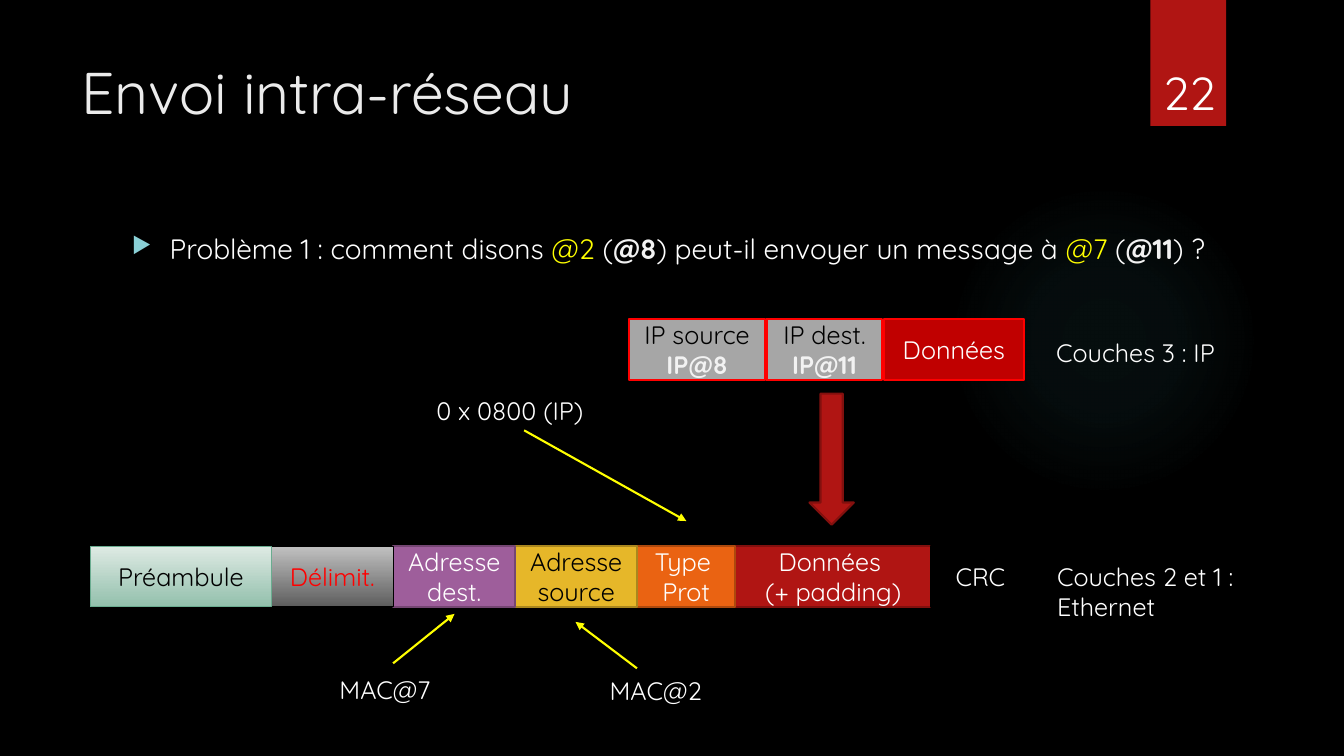
from dataclasses import dataclass

from lxml.etree import SubElement
from pptx import Presentation
from pptx.dml.color import RGBColor
from pptx.enum.shapes import MSO_CONNECTOR, MSO_SHAPE as SHAPE
from pptx.enum.text import MSO_ANCHOR as ANCHOR, PP_ALIGN as ALIGN
from pptx.oxml import parse_xml
from pptx.oxml.ns import nsdecls, qn
from pptx.util import Pt

BLACK = RGBColor(0x00, 0x00, 0x00)
WHITE = RGBColor(0xFF, 0xFF, 0xFF)
TITLE_GREY = RGBColor(0xEB, 0xEB, 0xEB)
PALE = RGBColor(0xF2, 0xF2, 0xF2)
YELLOW = RGBColor(0xFF, 0xFF, 0x00)
RED = RGBColor(0xFF, 0x00, 0x00)
DARK_RED = RGBColor(0xC0, 0x00, 0x00)
ACCENT = RGBColor(0xB0, 0x15, 0x13)
ACCENT_EDGE = RGBColor(0x82, 0x10, 0x0E)
ORANGE = RGBColor(0xEA, 0x63, 0x12)
ORANGE_EDGE = RGBColor(0xAD, 0x49, 0x0D)
GOLD = RGBColor(0xE6, 0xB7, 0x29)
GOLD_EDGE = RGBColor(0xAA, 0x87, 0x1E)
PURPLE = RGBColor(0x9E, 0x5E, 0x9B)
PURPLE_EDGE = RGBColor(0x75, 0x46, 0x73)
GREY = RGBColor(0xA6, 0xA6, 0xA6)
SILVER = RGBColor(0xC1, 0xC1, 0xC1)
IRON = RGBColor(0x5E, 0x5E, 0x5E)
MINT = RGBColor(0xDE, 0xEA, 0xE4)
GREEN = RGBColor(0x93, 0xC0, 0xAC)
GREEN_EDGE = RGBColor(0x6A, 0xAC, 0x90)
TEAL = RGBColor(0x50, 0xB9, 0xC1)
BULLET = RGBColor(0x8A, 0xD0, 0xD6)

FONT = "Quicksand"
ROW_HEIGHT = 43.2
LINEAR = '<a:lin ang="5400000" scaled="0"/>'
RADIAL = ('<a:path path="circle">'
          '<a:fillToRect l="50000" t="50000" r="50000" b="50000"/></a:path>')


@dataclass(frozen=True)
class Run:
    text: str
    color: RGBColor = WHITE
    bold: bool = False


@dataclass(frozen=True)
class Stop:
    position: int
    color: RGBColor
    alpha: int = 100


@dataclass(frozen=True)
class Field:
    """One field of a packet; each run is a paragraph."""
    width: float
    lines: tuple[Run, ...]
    fill: RGBColor | tuple[Stop, ...]
    edge: RGBColor
    edge_width: float = 1.5


@dataclass(frozen=True)
class Label:
    left: float
    top: float
    width: float
    height: float
    run: Run
    size: int = 18


@dataclass(frozen=True)
class Pointer:
    start: tuple[float, float]
    end: tuple[float, float]


ETHERNET = (
    Field(129.2, (Run("Préambule", BLACK),), (Stop(0, MINT), Stop(100, GREEN)), GREEN_EDGE, 0.75),
    Field(87.1, (Run("Délimit.", RED),), (Stop(0, SILVER), Stop(100, IRON)), BLACK, 0.75),
    Field(87.1, (Run("Adresse dest."),), PURPLE, PURPLE_EDGE),
    Field(87.1, (Run("Adresse source", BLACK),), GOLD, GOLD_EDGE),
    Field(70, (Run("Type "), Run("Prot")), ORANGE, ORANGE_EDGE),
    Field(140.2, (Run("Données "), Run("(+ padding)")), ACCENT, ACCENT_EDGE),
)
CRC = Field(70, (Run("CRC"),), BLACK, BLACK)
IP = (
    Field(97.2, (Run("IP source", BLACK), Run("IP@8", PALE, True)), GREY, RED),
    Field(82.8, (Run("IP dest.", BLACK), Run("IP@11", PALE, True)), GREY, RED),
    Field(100.1, (Run("Données"),), DARK_RED, RED),
)
QUESTION = (
    Run("Problème 1 : comment disons "), Run("@2", YELLOW), Run(" ("), Run("@8", PALE, True),
    Run(") peut-il envoyer un message à "), Run("@7 ", YELLOW), Run("("),
    Run("@11", PALE, True), Run(") ?"),
)
LABELS = (
    Label(51.1, 36, 741, 110, Run("Envoi intra-réseau", TITLE_GREY), 42),
    Label(823.7, 42.5, 56.2, 47.5, Run("22"), 33),
    Label(748, 397.4, 196.6, 51, Run("Couches 2 et 1 : Ethernet")),
    Label(747.4, 237.6, 196.6, 29, Run("Couches 3 : IP")),
    Label(304.6, 278.6, 196.6, 29, Run("0 x 0800 (IP)")),
    Label(235.4, 478.4, 98.6, 29, Run("MAC@7")),
    Label(428.4, 478.8, 98.6, 29, Run("MAC@2")),
)
POINTERS = (
    Pointer((374.4, 307.4), (490.3, 372.2)),
    Pointer((280.8, 473.8), (324.7, 438.5)),
    Pointer((455, 477.4), (411.1, 444.2)),
)


def add_run(p, run: Run, size: int) -> None:
    r = p.add_run()
    r.text = run.text
    formats = {"name": FONT, "size": Pt(size), "bold": run.bold}
    for name, value in formats.items():
        setattr(r.font, name, value)
    r.font.color.rgb = run.color


def set_gradient(sp, stops: tuple[Stop, ...], direction: str) -> None:
    marks = "".join(
        f'<a:gs pos="{s.position * 1000}"><a:srgbClr val="{s.color}">'
        f'<a:alpha val="{s.alpha * 1000}"/></a:srgbClr></a:gs>' for s in stops)
    sp._element.spPr.find(qn("a:prstGeom")).addnext(parse_xml(
        f'<a:gradFill {nsdecls("a")} rotWithShape="1"><a:gsLst>{marks}</a:gsLst>'
        f'{direction}</a:gradFill>'))


def add_figure(slide, kind, box, fill, edge=None, edge_width=1.5, direction=LINEAR):
    sp = slide.shapes.add_shape(kind, *map(Pt, box))
    sp.shadow.inherit = False
    if isinstance(fill, RGBColor):
        sp.fill.solid()
        sp.fill.fore_color.rgb = fill
    else:
        set_gradient(sp, fill, direction)
    if edge is None:
        sp.line.fill.background()
    else:
        sp.line.color.rgb = edge
        sp.line.width = Pt(edge_width)
    return sp


def add_field(slide, field: Field, left: float, top: float) -> None:
    sp = add_figure(slide, SHAPE.RECTANGLE, (left, top, field.width, ROW_HEIGHT),
                    field.fill, field.edge, field.edge_width)
    tf = sp.text_frame
    tf.word_wrap = True
    tf.vertical_anchor = ANCHOR.MIDDLE
    for i, line in enumerate(field.lines):
        p = tf.add_paragraph() if i else tf.paragraphs[0]
        p.alignment = ALIGN.CENTER
        add_run(p, line, 18)


def add_packet(slide, fields: tuple[Field, ...], left: float, top: float, gap: float = 0) -> float:
    """Draw the fields from right to left and return the right end."""
    right = end = left + sum(f.width + gap for f in fields)
    for field in reversed(fields):
        right -= field.width + gap
        add_field(slide, field, right, top)
    return end


def add_text(slide, box):
    tf = slide.shapes.add_textbox(*map(Pt, box)).text_frame
    tf.word_wrap = True
    return tf.paragraphs[0]


def add_question(slide) -> None:
    p = add_text(slide, (87.1, 162, 828.7, 40))
    pPr = p._p.get_or_add_pPr()
    pPr.set("marL", str(Pt(27)))
    pPr.set("indent", str(-Pt(27)))
    SubElement(SubElement(pPr, qn("a:buClr")), qn("a:srgbClr"), val=str(BULLET))
    SubElement(pPr, qn("a:buSzPct"), val="80000")
    SubElement(pPr, qn("a:buChar"), char="▶")
    for run in QUESTION:
        add_run(p, run, 20)


def add_pointer(slide, pointer: Pointer) -> None:
    s = slide.shapes.add_connector(MSO_CONNECTOR.STRAIGHT, *map(Pt, pointer.start + pointer.end))
    s.line.color.rgb = YELLOW
    s.line.width = Pt(1.5)
    spPr = s._element.spPr
    SubElement(spPr.find(qn("a:ln")), qn("a:tailEnd"), type="triangle")
    SubElement(spPr, qn("a:effectLst"))


def main() -> None:
    prs = Presentation()
    prs.slide_width, prs.slide_height = Pt(960), Pt(540)
    slide = prs.slides.add_slide(prs.slide_layouts[6])
    slide.background.fill.solid()
    slide.background.fill.fore_color.rgb = BLACK

    glow = (Stop(0, TEAL, 7), Stop(36, TEAL, 6), Stop(69, TEAL, 0))
    add_figure(slide, SHAPE.OVAL, (677.5, 131.8, 221.8, 221.8), glow, direction=RADIAL)
    add_figure(slide, SHAPE.RECTANGLE, (821.8, 0, 54, 90), ACCENT)
    add_question(slide)
    crc_left = add_packet(slide, ETHERNET, 64.6, 390.2)
    add_field(slide, CRC, crc_left, 390.2)
    add_figure(slide, SHAPE.DOWN_ARROW, (578.2, 281.2, 31.7, 93.6), ACCENT, ACCENT_EDGE)
    add_packet(slide, IP, 449.3, 228.2, gap=1)
    for label in LABELS:
        p = add_text(slide, (label.left, label.top, label.width, label.height))
        add_run(p, label.run, label.size)
    for pointer in POINTERS:
        add_pointer(slide, pointer)
    prs.save("out.pptx")


if __name__ == "__main__":
    main()
